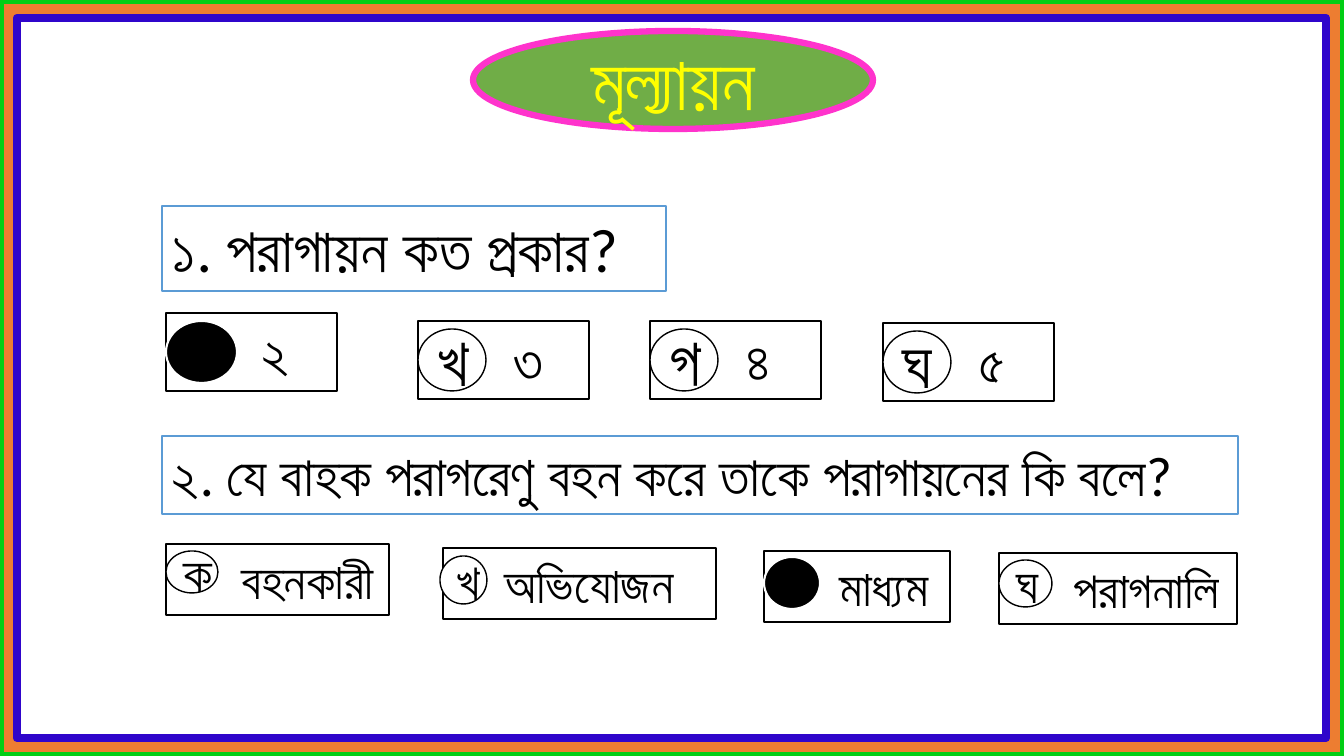
from dataclasses import dataclass

from pptx import Presentation
from pptx.dml.color import RGBColor
from pptx.enum.shapes import MSO_SHAPE
from pptx.enum.text import MSO_ANCHOR, PP_ALIGN
from pptx.util import Emu, Pt

FRAME, RECTANGLE, OVAL = MSO_SHAPE.FRAME, MSO_SHAPE.RECTANGLE, MSO_SHAPE.OVAL
TOP, MIDDLE = MSO_ANCHOR.TOP, MSO_ANCHOR.MIDDLE
LEFT, CENTER = PP_ALIGN.LEFT, PP_ALIGN.CENTER

SLIDE_WIDTH, SLIDE_HEIGHT = 1344, 756
EMU_PER_PX = 12192000 / SLIDE_WIDTH


@dataclass(frozen=True)
class Theme:
    font: str = "Calibri"
    white: str = "FFFFFF"
    black: str = "000000"
    orange: str = "ED7D31"
    lime: str = "02CE15"
    indigo: str = "2F05CB"
    leaf: str = "70AD47"
    pink: str = "FF33CC"
    yellow: str = "FFFF00"
    blue: str = "5B9BD5"
    title_size: int = 54
    label_size: int = 48
    question_size: int = 44
    number_size: int = 40
    word_size: int = 36


THEME = Theme()

NUMBER_CHOICES = [
    ("২", 166, 313, 171, 96, None, (0, 8, 71, 62)),
    ("৩", 418, 321, 171, 96, "খ", (0, 8, 68, 62)),
    ("৪", 650, 321, 171, 96, "গ", (0, 8, 68, 62)),
    ("৫", 883, 323, 171, 96, "ঘ", (0, 8, 68, 62)),
]
WORD_CHOICES = [
    ("বহনকারী", 166, 544, 223, 75, "ক", (0, 7, 52, 42)),
    ("অভিযোজন", 443, 548, 273, 62, "খ", (-3, 8, 47, 48)),
    ("মাধ্যম", 764, 551, 186, 75, None, (0, 6, 56, 52)),
    ("পরাগনালি", 999, 553, 238, 75, "ঘ", (0, 7, 53, 47)),
]


def px(length):
    return Emu(round(length * EMU_PER_PX))


def add_box(slide, kind, left, top, width, height, fill, line, line_width=1):
    shape = slide.shapes.add_shape(kind, px(left), px(top), px(width), px(height))
    shape.shadow.inherit = False
    shape.fill.solid()
    shape.fill.fore_color.rgb = RGBColor.from_string(fill)
    shape.line.color.rgb = RGBColor.from_string(line)
    shape.line.width = Pt(line_width)
    return shape


def write_text(shape, text, size, color=THEME.black, bold=False,
               align=LEFT, anchor=TOP, inset=10):
    frame = shape.text_frame
    frame.word_wrap = True
    frame.vertical_anchor = anchor
    frame.margin_left = px(inset)
    paragraph = frame.paragraphs[0]
    paragraph.alignment = align
    run = paragraph.add_run()
    run.text = text
    run.font.name = THEME.font
    run.font.size = Pt(size)
    run.font.bold = bold
    run.font.color.rgb = RGBColor.from_string(color)


def add_border(slide):
    add_box(slide, FRAME, 0, 0, SLIDE_WIDTH, SLIDE_HEIGHT, THEME.orange, THEME.lime, 6)
    add_box(slide, RECTANGLE, 17, 18, 1309, 720, THEME.white, THEME.indigo, 6)


def add_title(slide, text):
    shape = add_box(slide, OVAL, 473, 31, 400, 98, THEME.leaf, THEME.pink, 4.5)
    write_text(shape, text, THEME.title_size, color=THEME.yellow, bold=True,
               align=CENTER, anchor=MIDDLE)


def add_question(slide, text, top, width, height, size):
    shape = add_box(slide, RECTANGLE, 162, top, width, height, THEME.white, THEME.blue)
    write_text(shape, text, size)


def add_choices(slide, choices, height, text_size, label_size):
    for text, left, top, width, inset, label, mark in choices:
        box = add_box(slide, RECTANGLE, left, top, width, height, THEME.white, THEME.black)
        write_text(box, text, text_size, inset=inset)
        offset_x, offset_y, mark_width, mark_height = mark
        place = (left + offset_x, top + offset_y, mark_width, mark_height)
        if label:
            circle = add_box(slide, OVAL, *place, THEME.white, THEME.black)
            write_text(circle, label, label_size, align=CENTER, anchor=MIDDLE)
        else:
            add_box(slide, OVAL, *place, THEME.black, THEME.white, 1.5)


def main():
    presentation = Presentation()
    presentation.slide_width = px(SLIDE_WIDTH)
    presentation.slide_height = px(SLIDE_HEIGHT)
    slide = presentation.slides.add_slide(presentation.slide_layouts[6])
    add_border(slide)
    add_title(slide, "মূল্যায়ন")
    add_question(slide, "১. পরাগায়ন কত প্রকার?", 206, 504, 85, THEME.question_size)
    add_choices(slide, NUMBER_CHOICES, 78, THEME.number_size, THEME.label_size)
    add_question(slide, "২. যে বাহক পরাগরেণু বহন করে তাকে পরাগায়নের কি বলে?",
                 436, 1076, 78, THEME.number_size)
    add_choices(slide, WORD_CHOICES, 71, THEME.word_size, THEME.word_size)
    presentation.save("out.pptx")


if __name__ == "__main__":
    main()
